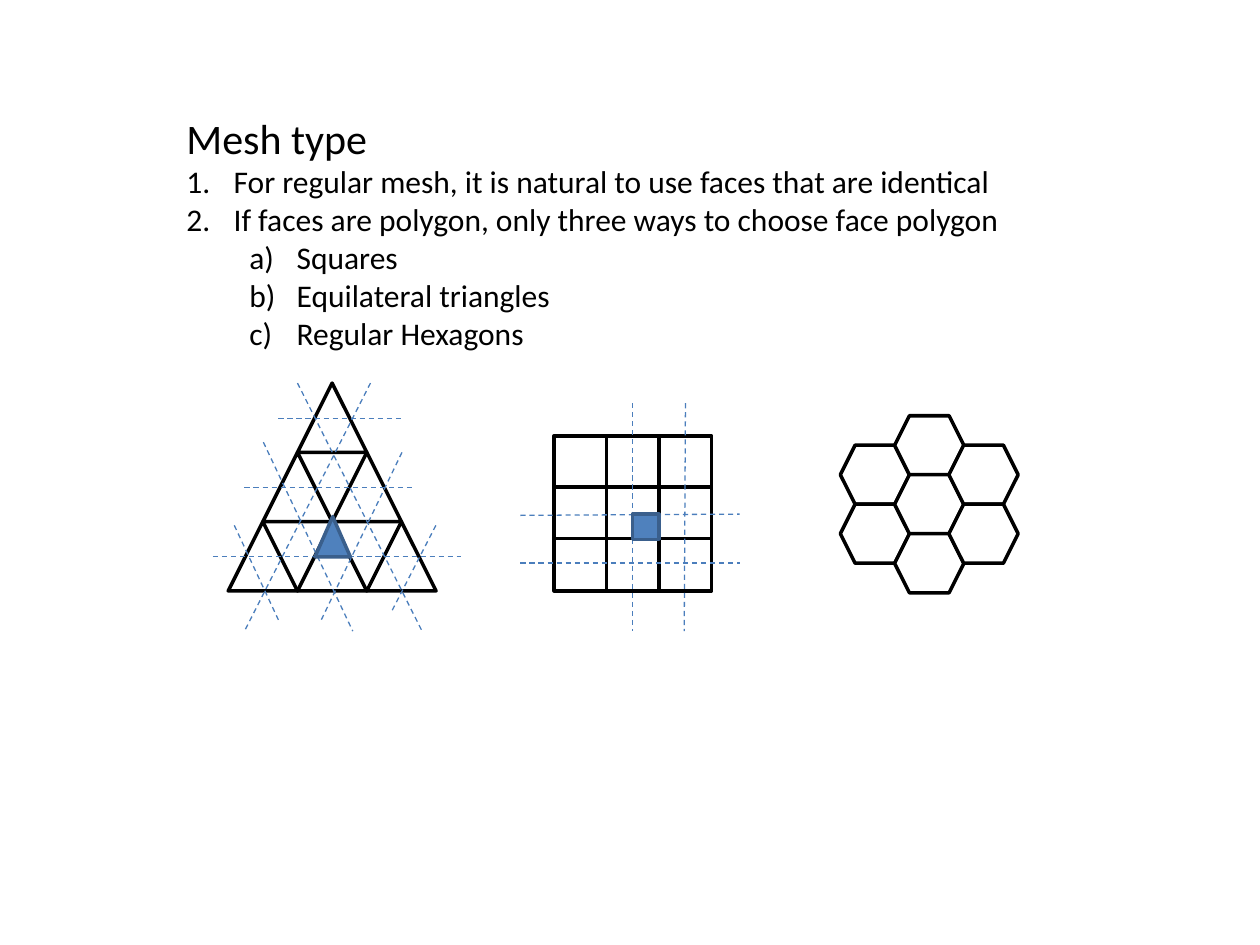
"""Build the slide on mesh types: triangles, squares and hexagons."""
from lxml.etree import SubElement
from pptx import Presentation
from pptx.dml.color import RGBColor
from pptx.enum.dml import MSO_LINE_DASH_STYLE as Dash
from pptx.enum.shapes import MSO_CONNECTOR as Link, MSO_SHAPE as Kind
from pptx.enum.text import MSO_AUTO_SIZE as Fit
from pptx.oxml.ns import qn
from pptx.util import Pt

BLACK = RGBColor(0x00, 0x00, 0x00)
WHITE = RGBColor(0xFF, 0xFF, 0xFF)
BLUE = RGBColor(0x4F, 0x81, 0xBD)
NAVY = RGBColor(0x3A, 0x5F, 0x8C)
DASHED = RGBColor(0x4B, 0x7E, 0xBC)

TEXT = [
    ("Mesh type", 24, 0, None),
    ("For regular mesh, it is natural to use faces that are identical", 18, 0, "arabicPeriod"),
    ("If faces are polygon, only three ways to choose face polygon", 18, 0, "arabicPeriod"),
    ("Squares", 18, 1, "alphaLcParenR"),
    ("Equilateral triangles", 18, 1, "alphaLcParenR"),
    ("Regular Hexagons", 18, 1, "alphaLcParenR"),
]
TRI_CUTS = [
    (150.5, 252.7, 201.6, 360.7), (170, 218.9, 241.2, 360.7),
    (133.9, 300.2, 159.1, 354.2), (211.7, 218.9, 139.7, 360.7),
    (229.7, 258.5, 183.6, 354.2), (249.1, 300.2, 223.9, 349.2),
    (159.1, 239, 229, 239), (139.7, 278.6, 236.2, 278.6),
    (121.7, 318.2, 263.5, 318.2),
]
BOX_CUTS = [
    (361.4, 230.4, 361.4, 360.7), (391.7, 230.4, 391, 360.7),
    (297.4, 294.5, 422.6, 293.8), (297.4, 321.8, 422.6, 321.8),
]
HEX_COLS = [(254.4, 2), (237.6, 3), (254.4, 2)]


class Sheet:
    """Holds the style and the slide being drawn."""

    def __init__(self, deck, font="Calibri", edge=2, thin=0.75):
        self.slide = deck.slides.add_slide(deck.slide_layouts[6])
        self.font, self.edge, self.thin = font, edge, thin

    def text(self, x, y, w, h, rows):
        frame = self.slide.shapes.add_textbox(Pt(x), Pt(y), Pt(w), Pt(h)).text_frame
        frame.word_wrap = True
        frame.auto_size = Fit.SHAPE_TO_FIT_TEXT
        for i, (words, size, level, mark) in enumerate(rows):
            para = frame.add_paragraph() if i else frame.paragraphs[0]
            para.level = level
            run = para.add_run()
            run.text = words
            run.font.name, run.font.size = self.font, Pt(size)
            run.font.color.rgb = BLACK
            if mark:
                props = para._p.get_or_add_pPr()
                props.set("marL", str(Pt(27 + 36 * level)))
                props.set("indent", str(Pt(-27)))
                SubElement(props, qn("a:buFont"), typeface="+mj-lt")
                SubElement(props, qn("a:buAutoNum"), type=mark)

    def face(self, kind, x, y, w, h, fill=WHITE, line=BLACK):
        shape = self.slide.shapes.add_shape(kind, Pt(x), Pt(y), Pt(w), Pt(h))
        shape.shadow.inherit = False
        shape.fill.solid()
        shape.fill.fore_color.rgb = fill
        shape.line.color.rgb = line
        shape.line.width = Pt(self.edge)
        if kind == Kind.PARALLELOGRAM:
            shape.adjustments[0] = 0

    def cut(self, *ends):
        link = self.slide.shapes.add_connector(Link.STRAIGHT, *map(Pt, ends))
        link.line.color.rgb = DASHED
        link.line.width = Pt(self.thin)
        link.line.dash_style = Dash.DASH
        SubElement(link._element.spPr, qn("a:effectLst"))


def main():
    deck = Presentation()
    deck.slide_width, deck.slide_height = Pt(720), Pt(540)
    sheet = Sheet(deck)
    sheet.text(99.4, 60.5, 538.6, 145.4, TEXT)

    side = 39.6
    for row in range(3):
        for col in range(row + 1):
            sheet.face(Kind.ISOSCELES_TRIANGLE, 170 + (col - row / 2) * side,
                       218.9 + row * side, side, side)
    for ends in TRI_CUTS:
        sheet.cut(*ends)

    for row in range(3):
        for col in range(3):
            sheet.face(Kind.PARALLELOGRAM, 316.7 + col * 30, 249.1 + row * 29.3, 30, 30)
    for ends in BOX_CUTS:
        sheet.cut(*ends)
    sheet.face(Kind.PARALLELOGRAM, 361.4, 293.8, 15.1, 14.4, BLUE, NAVY)
    sheet.face(Kind.ISOSCELES_TRIANGLE, 180, 295.2, 20.2, 23, BLUE, NAVY)

    for col, (top, count) in enumerate(HEX_COLS):
        for row in range(count):
            sheet.face(Kind.HEXAGON, 480.2 + col * 31, top + row * 33.7, side, 33.8)
    deck.save("out.pptx")


if __name__ == "__main__":
    main()
